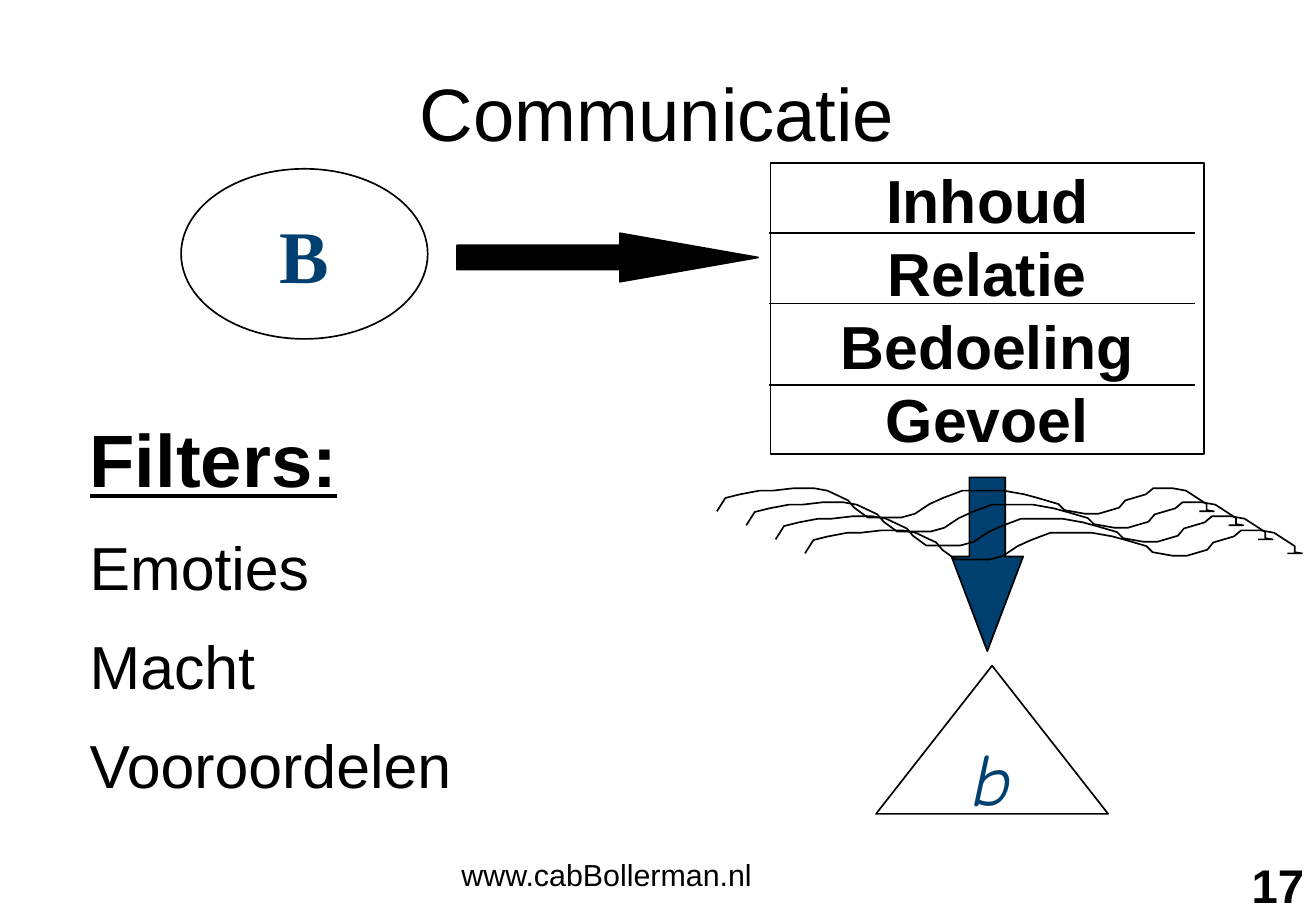
from dataclasses import dataclass

from lxml import etree
from pptx import Presentation
from pptx import util as u
from pptx.dml.color import RGBColor
from pptx.enum import shapes, text
from pptx.oxml.ns import qn

KIND = shapes.MSO_SHAPE
ALIGN = text.PP_ALIGN
ANCHOR = text.MSO_ANCHOR


@dataclass(frozen=True)
class Theme:
    ink: RGBColor = RGBColor(0x00, 0x00, 0x00)
    paper: RGBColor = RGBColor(0xFF, 0xFF, 0xFF)
    blue: RGBColor = RGBColor(0x00, 0x40, 0x70)
    sans: str = "Arial"
    serif: str = "Times New Roman"
    comic: str = "Comic Neue"
    heading: int = 44
    body: int = 36
    number: int = 28
    footer: int = 18
    line: int = 1


class Canvas:
    """Draws on one slide; every place is left, top, width, height in percent of the slide."""

    def __init__(self, presentation, theme):
        self.theme = theme
        self.column = presentation.slide_width / 100
        self.row = presentation.slide_height / 100
        self.slide = presentation.slides.add_slide(presentation.slide_layouts[6])

    def place(self, left, top, width, height):
        return (round(left * self.column), round(top * self.row),
                round(width * self.column), round(height * self.row))

    def outline(self, shape):
        shape.line.color.rgb = self.theme.ink
        shape.line.width = u.Pt(self.theme.line)

    def shape(self, kind, place, fill, adjustments=()):
        shape = self.slide.shapes.add_shape(kind, *self.place(*place))
        shape.shadow.inherit = False
        shape.fill.solid()
        shape.fill.fore_color.rgb = fill
        self.outline(shape)
        for index, value in enumerate(adjustments):
            shape.adjustments[index] = value
        return shape

    def label(self, shape, lines, **style):
        """Puts centred text that does not wrap into a shape."""
        frame = shape.text_frame
        frame.word_wrap = False
        frame.vertical_anchor = ANCHOR.MIDDLE
        self.fill_text(frame, lines, align=ALIGN.CENTER, **style)

    def textbox(self, place, lines, **style):
        frame = self.slide.shapes.add_textbox(*self.place(*place)).text_frame
        frame.word_wrap = True
        self.fill_text(frame, lines, **style)
        return frame

    def fill_text(self, frame, lines, size, align=ALIGN.LEFT, name=None, color=None,
                  bold=False, italic=False, spacing=None, before=0):
        for index, line in enumerate(lines):
            paragraph = frame.add_paragraph() if index else frame.paragraphs[0]
            paragraph.text = line
            paragraph.alignment = align
            paragraph.line_spacing = spacing
            if index and before:
                paragraph.space_before = u.Pt(before)
            font = paragraph.font
            font.name = name or self.theme.sans
            font.size = u.Pt(size)
            font.color.rgb = color or self.theme.ink
            font.bold = bold
            font.italic = italic

    def rule(self, left, right, top):
        x1, y, x2, _ = self.place(left, top, right, 0)
        connector = self.slide.shapes.add_connector(
            shapes.MSO_CONNECTOR.STRAIGHT, x1, y, x2, y)
        self.outline(connector)
        etree.SubElement(connector._element.spPr, qn("a:effectLst"))

    def curve(self, points, place):
        """Fits an open line, whose points start from 0, to a place."""
        left, top, width, height = self.place(*place)
        scale = (width / max(x for x, _ in points), height / max(y for _, y in points))
        builder = self.slide.shapes.build_freeform(*points[0], scale=scale)
        builder.add_line_segments(points[1:], close=False)
        shape = builder.convert_to_shape(left, top)
        shape.shadow.inherit = False
        shape.fill.background()
        self.outline(shape)


WAVE = [
    (0, 19), (7, 8), (19, 5), (35, 2), (46, 2), (63, 0), (80, 0), (91, 2), (108, 10),
    (113, 16), (124, 24), (136, 24), (152, 24), (163, 21), (175, 13), (186, 8),
    (202, 2), (219, 2), (236, 2), (253, 5), (264, 8), (281, 13), (286, 18), (303, 21),
    (314, 21), (331, 16), (336, 10), (353, 5), (359, 0), (375, 0), (386, 2),
    (403, 13), (403, 18), (409, 19), (397, 19),
]


def main():
    presentation = Presentation()
    presentation.slide_width = u.Inches(10.83)
    presentation.slide_height = u.Inches(7.5)
    theme = Theme()
    canvas = Canvas(presentation, theme)

    sender = canvas.shape(KIND.OVAL, (13.76, 18.53, 18.74, 18.67), theme.paper)
    canvas.label(sender, ["B"], size=theme.heading, name=theme.serif,
                 color=theme.blue, bold=True)
    message = canvas.shape(KIND.RECTANGLE, (58.54, 17.87, 32.96, 32), theme.paper)
    canvas.label(message, ["Inhoud", "Relatie", "Bedoeling", "Gevoel"],
                 size=theme.body, bold=True)
    canvas.shape(KIND.DOWN_ARROW, (72.3, 52.4, 5.45, 19.07), theme.blue, (0.5, 1.32))
    receiver = canvas.shape(KIND.ISOSCELES_TRIANGLE, (66.57, 73.07, 17.64, 16.27),
                            theme.paper)
    canvas.label(receiver, ["b"], size=theme.heading, name=theme.comic,
                 color=theme.blue, italic=True)

    for step in range(4):
        canvas.curve(WAVE, (54.48 + 2.23 * step, 53.6 + 1.54 * step, 37.77, 3.2))

    filters = canvas.textbox((5.91, 45.87, 54.48, 58.93),
                             ["Filters:", "Emoties", "Macht", "Vooroordelen"],
                             size=theme.body, spacing=0.9, before=20)
    heading = filters.paragraphs[0].font
    heading.size = u.Pt(theme.heading)
    heading.bold = True
    heading.underline = True

    canvas.shape(KIND.RIGHT_ARROW, (34.72, 25.6, 22.9, 5.33), theme.ink, (0.5, 2.85))
    for top in (25.6, 33.33, 42.27):
        canvas.rule(58.45, 90.77, top)

    title = canvas.textbox((7.48, 6.8, 84.95, 20.93), ["Communicatie"],
                           size=theme.heading, align=ALIGN.CENTER, spacing=0.95)
    title.margin_top = u.Inches(0.1)
    canvas.textbox((34.16, 93.33, 31.67, 7.6), ["www.cabBollerman.nl"], size=theme.footer)
    canvas.textbox((79.22, 93.33, 20.78, 6.67), ["17"], size=theme.number,
                   align=ALIGN.RIGHT, bold=True)

    presentation.save("out.pptx")


if __name__ == "__main__":
    main()
